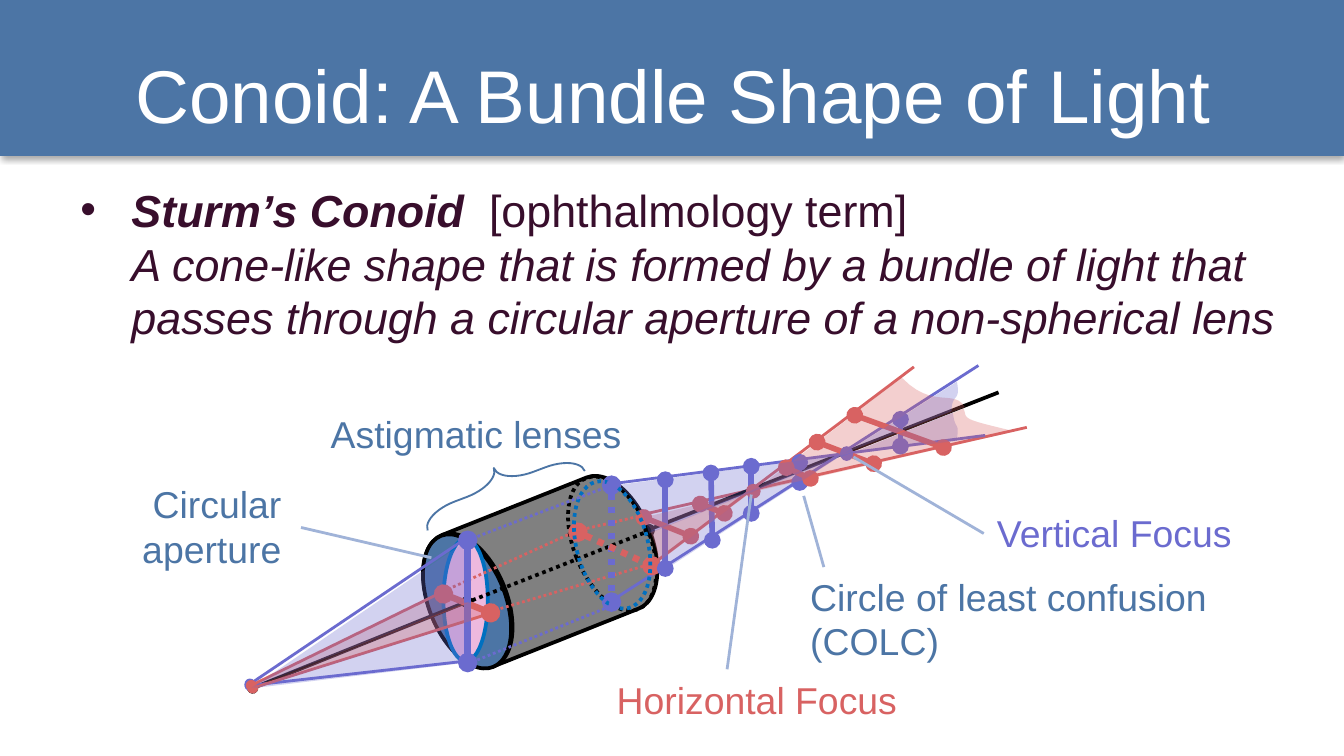
from lxml import etree
from pptx import Presentation
from pptx import util as u
from pptx.dml.color import RGBColor
from pptx.enum import dml, shapes, text
from pptx.oxml import ns

PX = 9144
COLOURS = {
    "banner": "4C75A5", "white": "FFFFFF", "body": "380E2C", "black": "000000",
    "red": "D86262", "violet": "6B6BCF", "grey": "808080", "pink": "EDB9DE",
    "rim": "0070C0", "leader": "A0B3D8",
}
DOT = dml.MSO_LINE.ROUND_DOT
KIND = shapes.MSO_SHAPE


def px(value):
    return u.Emu(round(value * PX))


def colour(name):
    return RGBColor.from_string(COLOURS[name])


def child(parent, tag, **attributes):
    return etree.SubElement(parent, ns.qn(tag), attributes)


def style_line(line, name, width, dash=None):
    line.color.rgb = colour(name)
    line.width = u.Pt(width)
    if dash:
        line.dash_style = dash


def add_text(page, area, lines, size=20, fill="banner", align=None,
             anchor=text.MSO_ANCHOR.TOP, wrap=True, bullet=None):
    box = page.shapes.add_textbox(*map(px, area))
    frame = box.text_frame
    frame.word_wrap = wrap
    frame.vertical_anchor = anchor
    for index, line in enumerate(lines):
        para = frame.add_paragraph() if index else frame.paragraphs[0]
        if bullet:
            props = para._p.get_or_add_pPr()
            props.set("marL", str(px(38)))
            props.set("indent", str(-px(38)))
            child(props, "a:buFont", typeface="Arial")
            child(props, "a:buChar", char=bullet)
        para.alignment = align
        para.font.size = u.Pt(size)
        for words, bold, italic in [(line, False, False)] if isinstance(line, str) else line:
            if words == "\n":
                para.add_line_break()
                continue
            span = para.add_run()
            span.text = words
            span.font.name = "Arial"
            span.font.size = u.Pt(size)
            span.font.bold = bold
            span.font.italic = italic
            span.font.color.rgb = colour(fill)
    return box


def add_solid(page, kind, area, fill=None, line=None, width=2, dash=None,
              turn=0, flip=False):
    shape = page.shapes.add_shape(kind, *map(px, area))
    shape.shadow.inherit = False
    shape.rotation = turn
    if flip:
        shape._element.spPr.xfrm.set("flipH", "1")
    if fill:
        shape.fill.solid()
        shape.fill.fore_color.rgb = colour(fill)
    else:
        shape.fill.background()
    if line:
        style_line(shape.line, line, width, dash)
    else:
        shape.line.fill.background()
    return shape


def add_banner(page):
    banner = add_solid(page, KIND.RECTANGLE, (0, 0, 1000, 116), "banner")
    effects = banner._element.spPr.find(ns.qn("a:effectLst"))
    shadow = child(effects, "a:outerShdw", blurRad=str(u.Pt(3.1)),
                   dist=str(u.Pt(1.8)), dir="5400000", rotWithShape="0")
    tone = child(shadow, "a:srgbClr", val=COLOURS["black"])
    child(tone, "a:alpha", val="35000")


def add_line(page, ends, name, width=1.5, dash=None, dots=()):
    line = page.shapes.add_connector(shapes.MSO_CONNECTOR.STRAIGHT, *map(px, ends))
    child(line._element.spPr, "a:effectLst")
    style_line(line.line, name, width, dash)
    for dot in dots:
        child(line.line._get_or_add_ln(), f"a:{dot}End", type="oval")
    return line


def add_rays(page, name, width, rays, dash=None, dots=("head", "tail")):
    for ends in rays:
        add_line(page, ends, name, width, dash, dots)


def add_beam(page, name, apex, start, pull, push, end):
    curve = []
    for step in range(1, 13):
        t = step / 12
        weights = ((1 - t) ** 3, 3 * t * (1 - t) ** 2, 3 * t * t * (1 - t), t ** 3)
        curve.append(tuple(px(sum(w * point[axis] for w, point in
                                  zip(weights, (start, pull, push, end))))
                           for axis in (0, 1)))
    builder = page.shapes.build_freeform(px(apex[0]), px(apex[1]))
    builder.add_line_segments([tuple(map(px, start))] + curve)
    beam = builder.convert_to_shape()
    beam.shadow.inherit = False
    beam.line.fill.background()
    beam.fill.solid()
    beam.fill.fore_color.rgb = colour(name)
    tone = beam._element.spPr.find(ns.qn("a:solidFill"))[0]
    child(tone, "a:alpha", val="30000")


def add_lens(page):
    brace = add_solid(page, KIND.LEFT_BRACE, (359, 298, 26, 125), line="banner",
                      width=1, turn=249.3, flip=True)
    brace.adjustments[0] = 1.02
    add_line(page, (429, 394, 764, 318), "red", dots=("head",))
    add_solid(page, KIND.FLOWCHART_DIRECT_ACCESS_STORAGE, (315, 373, 174, 105),
              "grey", "black", turn=338.3, flip=True)
    add_solid(page, KIND.OVAL, (319, 395, 57, 105), "banner", "black", turn=338.3)
    add_solid(page, KIND.OVAL, (330, 401, 33, 91), "pink", "rim")
    add_rays(page, "black", 2, [(188, 512, 347, 448)])
    add_rays(page, "black", 2, [(348, 448, 483, 395)], DOT)
    add_solid(page, KIND.OVAL, (427, 352, 57, 105), line="black", dash=DOT, turn=338.3)
    add_rays(page, "black", 2, [(483, 394, 743, 292)], dots=("head",))


def add_light(page):
    add_rays(page, "violet", 1.5, [(186, 509, 346, 401), (186, 510, 346, 492)])
    add_rays(page, "violet", 1.5, [(455, 360, 733, 324), (455, 447, 728, 272)],
             dots=("head",))
    add_rays(page, "red", 1.5, [(187, 510, 330, 440), (188, 512, 366, 456)])
    add_rays(page, "red", 1.5, [(330, 440, 429, 395), (365, 455, 483, 420)], DOT)
    add_rays(page, "red", 1.5, [(484, 421, 680, 273)], dots=("head",))
    add_rays(page, "red", 1.5, [(429, 395, 476, 384)], DOT, ("head",))
    add_rays(page, "violet", 3, [(559, 347, 559, 382)])
    add_rays(page, "red", 3, [(608, 329, 650, 345)])
    add_rays(page, "violet", 3, [(595, 344, 595, 359)])
    add_rays(page, "red", 3, [(585, 348, 603, 356)])
    add_rays(page, "red", 3.5, [(330, 442, 365, 456)])
    add_rays(page, "violet", 3.5, [(348, 402, 348, 493)])
    add_rays(page, "violet", 3.5, [(455, 361, 455, 448)], DOT)
    add_rays(page, "red", 3.5, [(430, 396, 485, 421)], DOT)
    add_solid(page, KIND.OVAL, (555, 360, 11, 11), "red")
    add_solid(page, KIND.OVAL, (625, 332, 10, 11), "violet")
    add_rays(page, "violet", 3, [(670, 312, 670, 332), (529, 352, 530, 402)])
    add_rays(page, "red", 3, [(636, 309, 702, 333)])
    add_rays(page, "violet", 3, [(495, 357, 495, 423)])
    add_rays(page, "red", 3, [(521, 375, 539, 382), (479, 385, 514, 399)])
    add_solid(page, KIND.OVAL, (429, 357, 53, 97), line="rim", dash=DOT, turn=345.3)
    add_rays(page, "violet", 1.5, [(348, 402, 455, 361), (348, 494, 457, 450)], DOT)


def add_beams(page):
    for beam in (
        ("violet", (189, 512), (349, 448), (349, 479), (348, 463), (348, 493)),
        ("red", (187, 511), (331, 440), (367, 457), (313, 434), (348, 449)),
        ("violet", (187, 512), (348, 402), (348, 432), (348, 418), (348, 448)),
        ("red", (189, 511), (348, 448), (384, 465), (332, 441), (367, 457)),
        ("violet", (631, 338), (709, 307), (711, 322), (714, 312), (712, 328)),
        ("red", (559, 366), (485, 395), (482, 389), (485, 396), (479, 385)),
        ("violet", (629, 337), (490, 427), (492, 417), (488, 403), (484, 395)),
        ("red", (560, 366), (671, 281), (694, 305), (710, 289), (718, 303)),
        ("violet", (630, 338), (483, 397), (479, 383), (472, 369), (459, 361)),
        ("red", (559, 366), (490, 418), (489, 411), (489, 409), (484, 396)),
        ("red", (560, 366), (717, 304), (720, 312), (713, 311), (755, 321)),
        ("violet", (629, 337), (712, 284), (715, 300), (708, 292), (708, 306)),
    ):
        add_beam(page, *beam)


def add_labels(page):
    add_text(page, (230, 301, 279, 44), [" Astigmatic lenses"])
    add_text(page, (449, 499, 240, 44), ["Horizontal Focus"], fill="red")
    vertical = add_text(page, (732, 375, 196, 44), ["Vertical Focus"],
                        fill="violet", wrap=False)
    aperture = add_text(page, (96, 353, 128, 79), [" Circular aperture"])
    add_text(page, (593, 422, 319, 77), ["Circle of least confusion", "(COLC)"])
    add_line(page, (598, 369, 613, 422), "leader")
    add_line(page, (635, 340, 732, 397), "leader").end_connect(vertical, 1)
    add_line(page, (559, 368, 541, 498), "leader")
    add_line(page, (321, 415, 224, 393), "leader").end_connect(aperture, 3)


def main():
    deck = Presentation()
    deck.slide_width = px(1000)
    deck.slide_height = u.Emu(deck.slide_width * 9 // 16)
    page = deck.slides.add_slide(deck.slide_layouts[6])
    add_banner(page)
    add_text(page, (20, 23, 961, 94), ["Conoid: A Bundle Shape of Light"], size=40,
             fill="white", align=text.PP_ALIGN.CENTER, anchor=text.MSO_ANCHOR.MIDDLE)
    definition = [
        ("Sturm’s Conoid  ", True, True),
        ("[ophthalmology term]", False, False),
        ("\n", False, False),
        ("A cone-like shape that is formed by a bundle of light that passes "
         "through a circular aperture of a non-spherical lens", False, True),
    ]
    add_text(page, (50, 131, 922, 95), [definition], size=24, fill="body", bullet="•")
    add_lens(page)
    add_light(page)
    add_beams(page)
    add_labels(page)
    deck.save("out.pptx")


if __name__ == "__main__":
    main()
